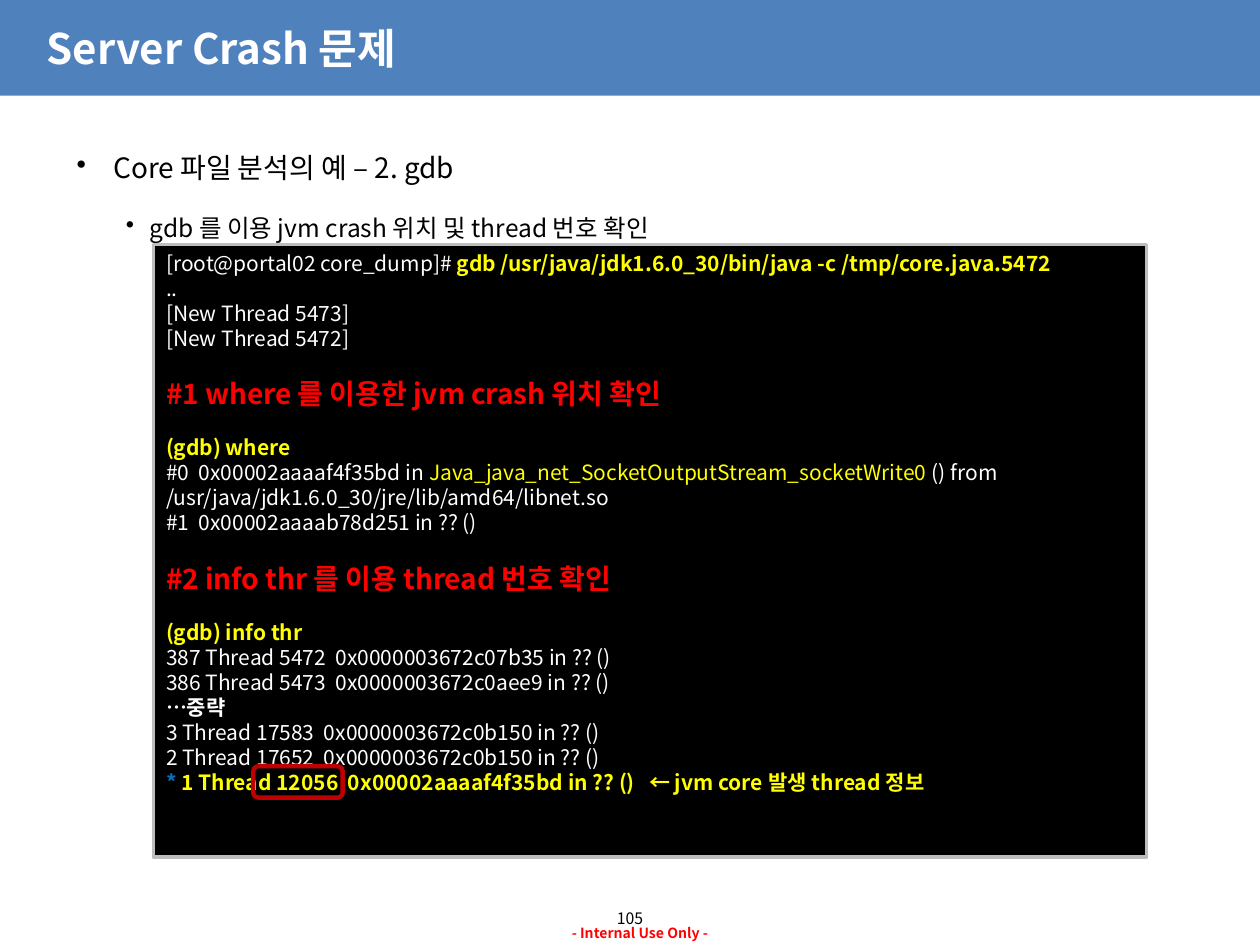
from pptx import Presentation
from pptx.dml.color import RGBColor
from pptx.enum import shapes, text
from pptx.oxml import ns, xmlchemy
from pptx.util import Pt

FONT = "Noto Sans CJK KR"
COLORS = {
    "banner": "4F81BD", "white": "FFFFFF", "black": "000000", "red": "FF0000",
    "yellow": "FFFF00", "blue": "0070C0", "frame": "BDBDBD", "mark": "C00000",
}
CODE_LINE = 14.3
HEADING_LINE = 19.7

PLAIN = {"color": "white"}
NOTE = {"color": "white", "bold": True}
CODE = {"color": "yellow"}
COMMAND = {"color": "yellow", "bold": True}
HEADING = {"color": "red", "bold": True, "size": 16}
STAR = {"color": "blue", "bold": True}

# Each line: its runs, and whether a gap of one line precedes it.
CONSOLE = [
    ([("[root@portal02 core_dump]# ", PLAIN),
      ("gdb /usr/java/jdk1.6.0_30/bin/java -c /tmp/core.java.5472", COMMAND)], False),
    ([("..", PLAIN)], False),
    ([("[New Thread 5473]", PLAIN)], False),
    ([("[New Thread 5472]", PLAIN)], False),
    ([("#1 where 를 이용한 jvm crash 위치 확인", HEADING)], True),
    ([("(gdb) where", COMMAND)], True),
    ([("#0  0x00002aaaaf4f35bd in ", PLAIN),
      ("Java_java_net_SocketOutputStream_socketWrite0", CODE),
      (" () from /usr/java/jdk1.6.0_30/jre/lib/amd64/libnet.so", PLAIN)], False),
    ([("#1  0x00002aaaab78d251 in ?? ()", PLAIN)], False),
    ([("#2 info thr 를 이용 thread 번호 확인", HEADING)], True),
    ([("(gdb) info thr", COMMAND)], True),
    ([("387 Thread 5472  0x0000003672c07b35 in ?? ()", PLAIN)], False),
    ([("386 Thread 5473  0x0000003672c0aee9 in ?? ()", PLAIN)], False),
    ([("…중략", NOTE)], False),
    ([("3 Thread 17583  0x0000003672c0b150 in ?? ()", PLAIN)], False),
    ([("2 Thread 17652  0x0000003672c0b150 in ?? ()", PLAIN)], False),
    ([("*", STAR),
      (" 1 Thread 12056  0x00002aaaaf4f35bd in ?? ()   ← jvm core 발생 thread 정보",
       COMMAND)], False),
]


def rgb(name):
    return RGBColor.from_string(COLORS[name])


def add_run(p, content, size=12, color="black", bold=False):
    r = p.add_run()
    r.text = content
    r.font.name = FONT
    r.font.size = Pt(size)
    r.font.bold = bold
    r.font.color.rgb = rgb(color)
    ea = xmlchemy.OxmlElement("a:ea")
    ea.set("typeface", FONT)
    r.font._element.find(ns.qn("a:latin")).addnext(ea)


def add_bullet(p, indent):
    """Give the paragraph a hanging bullet."""
    pPr = p._p.get_or_add_pPr()
    pPr.set("marL", str(Pt(indent)))
    pPr.set("indent", str(-Pt(indent)))
    bullet = xmlchemy.OxmlElement("a:buChar")
    bullet.set("char", "•")
    pPr.append(bullet)


def add_text(s, box, content, align=text.PP_ALIGN.LEFT, anchor=text.MSO_ANCHOR.TOP,
             margin=None, indent=None, line=None, **font):
    tf = s.shapes.add_textbox(*map(Pt, box)).text_frame
    tf.word_wrap = True
    tf.vertical_anchor = anchor
    if margin is not None:
        tf.margin_left = tf.margin_right = tf.margin_top = tf.margin_bottom = Pt(margin)
    p = tf.paragraphs[0]
    p.alignment = align
    if indent:
        add_bullet(p, indent)
    if line:
        p.line_spacing = Pt(line)
    add_run(p, content, **font)


def add_box(s, kind, box, fill=None, line=None, width=1):
    sp = s.shapes.add_shape(kind, *map(Pt, box))
    sp.shadow.inherit = False
    if fill:
        sp.fill.solid()
        sp.fill.fore_color.rgb = rgb(fill)
    else:
        sp.fill.background()
    if line:
        sp.line.color.rgb = rgb(line)
        sp.line.width = Pt(width)
    else:
        sp.line.fill.background()
    return sp


def fill_console(sp):
    tf = sp.text_frame
    tf.word_wrap = True
    tf.vertical_anchor = text.MSO_ANCHOR.TOP
    for i, (runs, gap) in enumerate(CONSOLE):
        p = tf.add_paragraph() if i else tf.paragraphs[0]
        p.alignment = text.PP_ALIGN.LEFT
        p.line_spacing = Pt(HEADING_LINE if runs[0][1] is HEADING else CODE_LINE)
        p.space_before = Pt(CODE_LINE if gap else 0)
        for content, font in runs:
            add_run(p, content, **font)


def main():
    prs = Presentation()
    prs.slide_width, prs.slide_height = Pt(720), Pt(540)
    s = prs.slides.add_slide(prs.slide_layouts[6])
    rect = shapes.MSO_SHAPE.RECTANGLE
    center, middle = text.PP_ALIGN.CENTER, text.MSO_ANCHOR.MIDDLE

    add_box(s, rect, (0, 0, 720, 54.7), fill="banner")
    add_text(s, (339, 510.5, 42, 28.8), "105", align=center, anchor=middle,
             margin=0, size=9)
    add_text(s, (263.5, 525, 204.5, 17), "- Internal Use Only -", align=center,
             size=8, color="red", bold=True)
    add_text(s, (19.5, 0, 675, 54.7), "Server Crash 문제", anchor=middle,
             size=24, color="white", bold=True)
    add_text(s, (36.7, 77.8, 618.5, 30), "Core 파일 분석의 예 – 2. gdb",
             indent=21, line=24, size=16)
    add_text(s, (64.8, 108.7, 590, 31), "gdb 를 이용 jvm crash 위치 및 thread 번호 확인",
             indent=13.7, line=26.3, size=14)

    console = add_box(s, rect, (87.8, 139.7, 567.4, 350), "black", "frame", 2)
    fill_console(console)
    add_box(s, shapes.MSO_SHAPE.ROUNDED_RECTANGLE, (144.7, 437.8, 51.1, 18),
            line="mark", width=2.5)
    prs.save("out.pptx")


if __name__ == "__main__":
    main()
